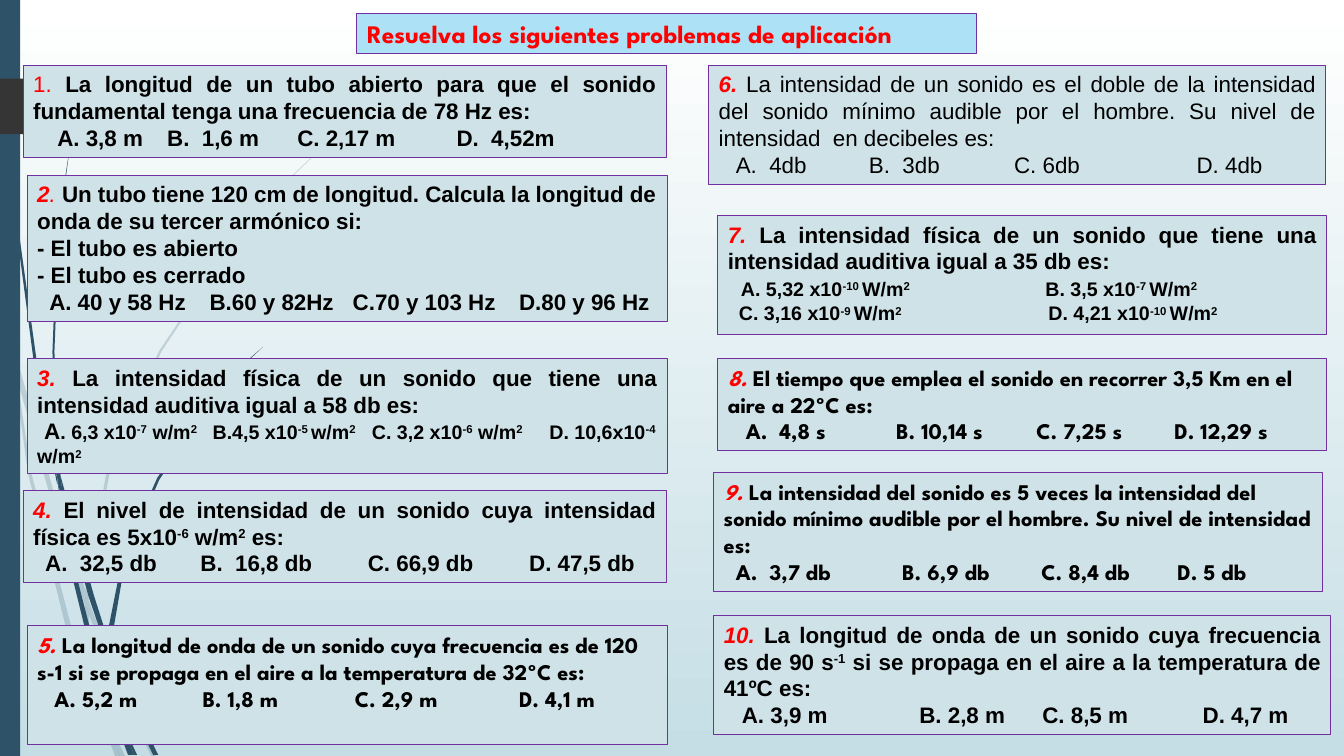
"""Build a slide with ten sound problems in two columns of cards."""
import pptx
import pptx.util
import pptx.dml.color
import pptx.enum.shapes
import pptx.enum.text
import pptx.oxml
import pptx.oxml.ns
from pptx.util import Inches

THEME = {
    "sky": "FFFFFF", "mist": "C5DEE5", "navy": "2E5369", "coal": "353535",
    "card": "CFE2E7", "head": "ADE1F5", "edge": "7030A0", "red": "FF0000", "ink": "000000",
    "title": 18, "text": 16, "small": 14, "rule": 0.75,
    "sans": "Arial", "round": "League Spartan",
}
TITLE = ("Resuelva los siguientes problemas de aplicación", (3.54, 0.13, 6.15, 0.4))

CARDS = [
    ((0.23, 0.65, 6.38, 0.91), "sans", True, True, [("1. ", False, False)],
     "La longitud de un tubo abierto para que el sonido fundamental tenga una frecuencia de 78 Hz es:",
     [("text", (0.24, 1.33, 2.62, 4.2), ["A. 3,8 m", "B.  1,6 m", "C. 2,17 m", "D.  4,52m"])]),
    ((0.27, 1.74, 6.35, 1.45), "sans", True, False, [("2", True, True), (". ", False, True)],
     "Un tubo tiene 120 cm de longitud. Calcula la longitud de onda de su tercer armónico si:",
     [("text", (), ["- El tubo es abierto"]),
      ("text", (), ["- El tubo es cerrado"]),
      ("text", (0.12, 1.71, 3.13, 4.78),
       ["A. 40 y 58 Hz", "B.60 y 82Hz", "C.70 y 103 Hz", "D.80 y 96 Hz"])]),
    ((0.27, 3.56, 6.35, 1.14), "sans", True, True, [("3. ", True, True)],
     "La intensidad física de un sonido que tiene una intensidad auditiva igual a 58 db es:",
     [("small", (0.07, 1.74, 3.32, 5.08),
       ["A|. 6,3 x10^-7^ w/m^2^", "B.4,5 x10^-5 ^w/m^2^",
        "C. 3,2 x10^-6^ w/m^2^", "D. 10,6x10^-4^ w/m^2^"])]),
    ((0.23, 4.87, 6.38, 0.91), "sans", True, True, [("4. ", True, True)],
     "El nivel de intensidad de un sonido cuya intensidad física es 5x10^-6^ w/m^2^ es:",
     [("text", (0.12, 1.66, 3.32, 4.92),
       ["A.  32,5 db", "B.  16,8 db", "C. 66,9 db", "D. 47,5 db"])]),
    ((0.27, 6.21, 6.35, 1.18), "round", True, False, [("5. ", True, True)],
     "La longitud de onda de un sonido cuya frecuencia es de 120 s-1 si se propaga "
     "en el aire a la temperatura de 32ºC es:",
     [("text", (0.17, 1.64, 3.15, 4.78), ["A. 5,2 m", "B. 1,8 m", "C. 2,9 m", "D. 4,1 m"])]),
    ((7.03, 0.65, 6.12, 1.18), "sans", False, True, [("6. ", True, True)],
     "La intensidad de un sonido es el doble de la intensidad del sonido mínimo audible "
     "por el hombre. Su nivel de intensidad  en decibeles es:",
     [("text", (0.17, 1.49, 2.93, 4.74), ["A.  4db", "B.  3db", "C. 6db", "D. 4db"])]),
    ((7.12, 2.14, 6.04, 1.18), "sans", True, True, [("7. ", True, True)],
     "La intensidad física de un sonido que tiene una intensidad auditiva igual a 35 db es:",
     [("small", (0.13, 3.15), ["|A. 5,32 x10^-10 ^W/m^2^", "B. 3,5 x10^-7 ^W/m^2^"]),
      ("small", (0.11, 3.18), ["C. 3,16 x10^-9 ^W/m^2^", "D. 4,21 x10^-10 ^W/m^2^"])]),
    ((7.12, 3.56, 6.04, 0.91), "round", True, False, [("8. ", True, True)],
     "El tiempo que emplea el sonido en recorrer 3,5 Km en el aire a 22ºC es:",
     [("text", (0.18, 1.67, 3.06, 4.43), ["A.  4,8 s", "B. 10,14 s", "C. 7,25 s", "D. 12,29 s"])]),
    ((7.08, 4.69, 6.04, 1.18), "round", True, False, [("9. ", True, True)],
     "La intensidad del sonido es 5 veces la intensidad del sonido mínimo audible "
     "por el hombre. Su nivel de intensidad es:",
     [("text", (0.12, 1.77, 3.15, 4.5), ["A.  3,7 db", "B. 6,9 db", "C. 8,4 db", "D. 5 db"])]),
    ((7.08, 6.11, 6.12, 1.18), "sans", True, True, [("10. ", True, True)],
     "La longitud de onda de un sonido cuya frecuencia es de 90 s^-1^ si se propaga "
     "en el aire a la temperatura de 41ºC es:",
     [("text", (0.18, 1.94, 3.16, 4.75), ["A. 3,9 m", "B. 2,8 m", "C. 8,5 m", "D. 4,7 m"])]),
]

PALE = [
    [(.11, 3.5), (.09, 3.22), (0, 2.82), (0, 2.99), (.1, 3.44)],
    [(.58, 5.22), (.84, 5.99), (.85, 5.86), (.62, 5.2), (.14, 3.45), (.17, 3.76)],
    [(.92, 6.07), (.88, 5.96), (.88, 6.1), (1.23, 6.94), (1.5, 7.5), (1.55, 7.5), (1.27, 6.92)],
    [(1.19, 7.5), (1.24, 7.5), (1.05, 7.11)],
    [(.93, 6.83), (.7, 6.19), (.31, 4.69), (.17, 3.76), (.11, 3.5), (.28, 4.7), (.65, 6.21),
     (.92, 6.93), (1.01, 7.14), (.99, 7.07)],
    [(.84, 5.99), (.87, 6.46), (.93, 6.83), (.96, 6.92), (1.05, 7.11), (1.03, 7.06),
     (.91, 6.46), (.88, 6.1), (.88, 6.08)],
    [(.88, 5.84), (1.1, 4.62), (1.6, 3.49), (2.29, 2.45), (2.68, 1.98), (2.9, 1.75),
     (3.12, 1.54), (3.12, 1.53), (2.89, 1.75), (2.68, 1.97), (2.28, 2.44), (1.58, 3.48),
     (1.07, 4.61), (.85, 5.84), (.85, 5.86), (.88, 5.96)],
    [(1.01, 7.14), (1.14, 7.5), (1.19, 7.5)],
    [(.88, 6.08), (.88, 5.96), (.85, 5.86), (.84, 5.99)],
    [(.96, 6.92), (.93, 6.83), (.99, 7.07), (1.01, 7.14), (1.19, 7.5), (1.05, 7.11)],
]
DARK = [
    [(.07, 1.1), (.17, 2.33), (.33, 3.55), (.56, 4.77), (.57, 4.81), (.55, 4.57), (.55, 4.53),
     (.36, 3.55), (.19, 2.32), (.08, 1.09), (.05, .48), (.04, 0), (.03, 0), (.04, .48)],
    [(.88, 5.92), (1.06, 6.45), (1.06, 6.31), (.93, 5.9), (.6, 4.72), (.64, 5.05)],
    [(1.13, 6.49), (1.1, 6.41), (1.11, 6.56), (1.32, 7.08), (1.52, 7.49), (1.57, 7.49),
     (1.36, 7.06)],
    [(1.1, 6.91), (.98, 6.57), (.72, 5.56), (.64, 5.05), (.57, 4.77), (.68, 5.57), (.93, 6.59),
     (1.11, 7.08), (1.17, 7.22), (1.16, 7.17)],
    [(.6, 4.72), (.58, 4.53), (.54, 3.49), (.58, 2.45), (.63, 1.93), (.7, 1.41), (.62, 1.93),
     (.56, 2.45), (.52, 3.49), (.55, 4.49)],
    [(1.33, 7.49), (1.36, 7.49), (1.22, 7.19)],
    [(.57, 4.77), (.64, 5.05), (.6, 4.72), (.55, 4.49), (.55, 4.53)],
    [(1.11, 6.33), (1.25, 5.52), (1.58, 4.76), (2.05, 4.06), (2.31, 3.74), (2.45, 3.59),
     (2.61, 3.44), (2.45, 3.58), (2.31, 3.73), (2.04, 4.05), (1.56, 4.74), (1.22, 5.51),
     (1.06, 6.31), (1.1, 6.41)],
    [(1.17, 7.22), (1.27, 7.49), (1.31, 7.49)],
    [(1.16, 7.06), (1.1, 6.91), (1.16, 7.17), (1.17, 7.22), (1.3, 7.49), (1.33, 7.49),
     (1.22, 7.19)],
]


def tint(name):
    return pptx.dml.color.RGBColor.from_string(THEME[name])


def paint(shape, fill, edge=None):
    shape.fill.solid()
    shape.fill.fore_color.rgb = tint(fill)
    if edge:
        shape.line.color.rgb = tint(edge)
        shape.line.width = pptx.util.Pt(THEME["rule"])
    else:
        shape.line.fill.background()


def write(para, text, size, face, color="ink", bold=True, slant=False):
    for turn, piece in enumerate(text.split("^")):
        if piece:
            run = para.add_run()
            run.text = piece
            font = run.font
            font.name, font.size = THEME[face], pptx.util.Pt(THEME[size])
            font.bold, font.italic, font.color.rgb = bold, slant, tint(color)
            if turn % 2:
                font._element.set("baseline", "30000")


def set_tabs(para, stops):
    tabs = pptx.oxml.parse_xml("<a:tabLst %s/>" % pptx.oxml.ns.nsdecls("a"))
    for stop in stops:
        tab = tabs.makeelement(pptx.oxml.ns.qn("a:tab"), {"pos": str(Inches(stop)), "algn": "l"})
        tabs.append(tab)
    para._p.get_or_add_pPr().append(tabs)


def add_strand(slide, points, pale):
    spots = [(Inches(x), Inches(y)) for x, y in points]
    pen = slide.shapes.build_freeform(*spots[0])
    pen.add_line_segments(spots[1:], close=True)
    strand = pen.convert_to_shape()
    strand.shadow.inherit = False
    paint(strand, "navy")
    if pale:
        color = strand._element.spPr.find(".//" + pptx.oxml.ns.qn("a:srgbClr"))
        color.append(pptx.oxml.parse_xml('<a:alpha %s val="20000"/>' % pptx.oxml.ns.nsdecls("a")))


def add_block(slide, kind, box, fill):
    block = slide.shapes.add_shape(kind, *map(Inches, box))
    block.shadow.inherit = False
    paint(block, fill)


def add_card(slide, box, face, bold, justify, marks, ask, rows):
    card = slide.shapes.add_textbox(*map(Inches, box))
    paint(card, "card", "edge")
    frame = card.text_frame
    frame.word_wrap = True
    para = frame.paragraphs[0]
    align = pptx.enum.text.PP_ALIGN
    para.alignment = align.JUSTIFY if justify else align.LEFT
    for mark, heavy, slant in marks:
        write(para, mark, "text", face, "red", heavy, slant)
    write(para, ask, "text", face, bold=bold)
    for size, stops, items in rows:
        para = frame.add_paragraph()
        line = "\t".join(items)
        if stops:
            set_tabs(para, stops)
            line = "\t" + line
        first, bar, rest = line.rpartition("|")
        write(para, first, "text", face, bold=bold)
        write(para, rest, size, face, bold=bold)


def add_title(slide, text, box):
    title = slide.shapes.title
    title.left, title.top, title.width, title.height = map(Inches, box)
    paint(title, "head", "edge")
    frame = title.text_frame
    frame.word_wrap = True
    frame.auto_size = pptx.enum.text.MSO_AUTO_SIZE.NONE
    frame.vertical_anchor = pptx.enum.text.MSO_ANCHOR.MIDDLE
    frame.paragraphs[0].alignment = pptx.enum.text.PP_ALIGN.LEFT
    write(frame.paragraphs[0], text, "title", "round", "red")


def main():
    deck = pptx.Presentation()
    deck.slide_width, deck.slide_height = Inches(13.33), Inches(7.5)
    slide = deck.slides.add_slide(deck.slide_layouts[5])
    back = slide.background.fill
    back.gradient()
    back.gradient_angle = 270
    for stop, name in zip(back.gradient_stops, ("sky", "mist")):
        stop.color.rgb = tint(name)
    for strands, pale in ((PALE, True), (DARK, False)):
        for points in strands:
            add_strand(slide, points, pale)
    kinds = pptx.enum.shapes.MSO_SHAPE
    add_block(slide, kinds.RECTANGLE, (0, 0, 0.2, 7.5), "navy")
    add_block(slide, kinds.PENTAGON, (0, 0.78, 1.74, 0.55), "coal")
    for card in CARDS:
        add_card(slide, *card)
    add_title(slide, *TITLE)
    deck.save("out.pptx")


if __name__ == "__main__":
    main()
